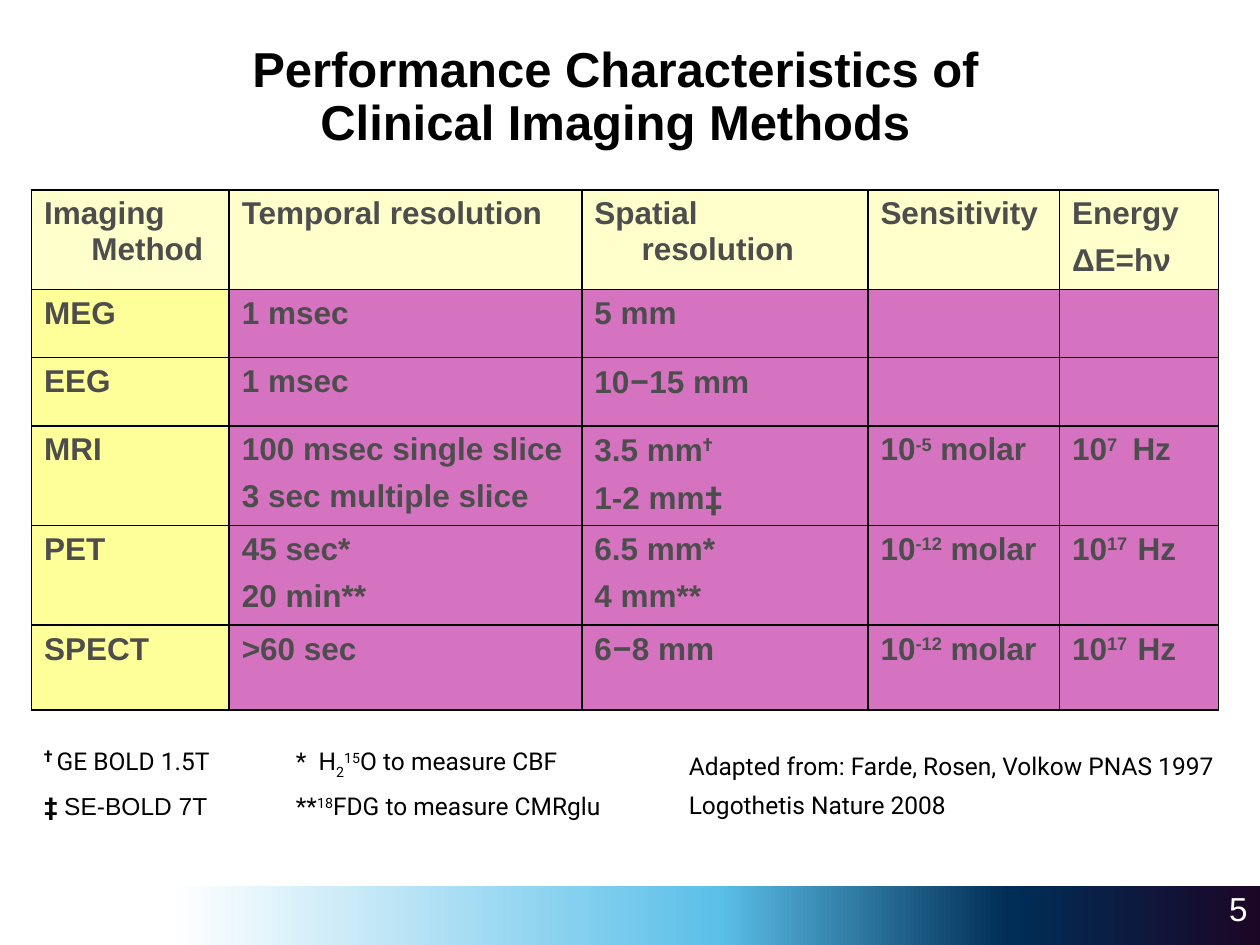
from lxml import etree
from pptx import Presentation
from pptx.dml import color
from pptx.enum import shapes, text
from pptx.oxml import ns
from pptx.util import Pt

COLORS = {
    "ink": "000000", "cell_text": "4D4D4D", "white": "FFFFFF",
    "header": "FFFFCC", "method": "FFFF99", "value": "D673C1",
}
BAND_STOPS = [(0, "FFFFFF"), (50, "5CC0E9"), (77, "002D56"), (100, "1C0626")]
COLUMNS = [113, 201.5, 163.5, 109.5, 91]
ROWS = [55, 39, 39, 56.5, 55, 48.5]

# A span is plain text, or a tuple of text and style overrides.
SUP = {"base": 30}
SUB = {"base": -25}
ROBOTO = {"font": "Roboto"}


def power(exponent, unit):
    return [["10", (exponent, SUP), unit]]


# Each cell is a list of paragraphs, each paragraph a list of spans.
TABLE = [
    [[["Imaging Method"]], [["Temporal resolution"]], [["Spatial resolution"]],
     [["Sensitivity"]], [["Energy"], ["ΔE=hν"]]],
    [[["MEG"]], [["1 msec"]], [["5 mm"]], [[]], [[]]],
    [[["EEG"]], [["1 msec"]], [["10", ("–", ROBOTO), "15 mm"]], [[]], [[]]],
    [[["MRI"]], [["100 msec single slice"], ["3 sec multiple slice"]],
     [["3.5 mm", ("†", ROBOTO | SUP)], ["1-2 mm", ("‡", ROBOTO)]],
     power("-5", " molar"), power("7   ", "Hz")],
    [[["PET"]], [["45 sec*"], ["20 min**"]], [["6.5 mm*"], ["4 mm**"]],
     power("-12", " molar"), power("17  ", "Hz")],
    [[["SPECT"]], [[">60 sec"]], [["6", ("–", ROBOTO), "8 mm"]],
     power("-12", " molar"), power("17  ", "Hz")],
]
FOOTNOTES = [
    [("† ", {"size": 16, "bold": True} | SUP), "GE BOLD 1.5T \t*  H",
     ("2", SUB), ("15", SUP), "O to measure CBF"],
    [("‡ ", {"bold": True}), ("SE-BOLD 7T ", {"font": "Arial"}), "\t**",
     ("18", SUP), "FDG to measure CMRglu"],
]
SOURCES = [["Adapted from: Farde, Rosen, Volkow PNAS 1997"],
           ["Logothetis Nature 2008"]]


def rgb(name):
    return color.RGBColor.from_string(COLORS[name])


def add_element(parent, tag, **attributes):
    return etree.SubElement(parent, ns.qn(tag), attributes)


def set_font(font, style):
    font.name = style["font"]
    font.size = Pt(style["size"])
    font.bold = style.get("bold", False)
    font.color.rgb = rgb(style["color"])


def add_spans(para, spans, style):
    for item in spans:
        words, changes = (item, {}) if isinstance(item, str) else item
        span = para.add_run()
        span.text = words
        merged = style | changes
        set_font(span.font, merged)
        if "base" in merged:
            span._r.get_or_add_rPr().set("baseline", str(merged["base"] * 1000))


def add_paragraphs(frame, paragraphs, style, gap=0):
    for index, spans in enumerate(paragraphs):
        para = frame.add_paragraph() if index else frame.paragraphs[0]
        if index:
            para.space_before = Pt(gap)
        add_spans(para, spans, style)


def add_text_box(page, box, paragraphs, style, gap=0, wrap=True):
    frame = page.shapes.add_textbox(*map(Pt, box)).text_frame
    frame.word_wrap = wrap
    add_paragraphs(frame, paragraphs, style, gap)
    return frame


def add_footer_band(page, box):
    """Draw the gradient band and the page number at its right end."""
    left, top, width, height = box
    band = page.shapes.add_shape(shapes.MSO_SHAPE.RECTANGLE, *map(Pt, box))
    band.shadow.inherit = False
    band.line.fill.background()
    band.fill.gradient()
    band.fill.gradient_angle = 0
    stops = band._element.spPr.find(".//" + ns.qn("a:gsLst"))
    for stop in list(stops):
        stops.remove(stop)
    for position, value in BAND_STOPS:
        stop = add_element(stops, "a:gs", pos=str(position * 1000))
        add_element(stop, "a:srgbClr", val=value)

    style = {"font": "Arial", "size": 19, "color": "white"}
    number_box = (left + width - 150, top - 2, 150, 36)
    number = add_text_box(page, number_box, [["5"]], style)
    number.paragraphs[0].alignment = text.PP_ALIGN.RIGHT


def place_title(page, box):
    title = page.shapes.title
    title.left, title.top, title.width, title.height = map(Pt, box)
    frame = title.text_frame
    frame.vertical_anchor = text.MSO_ANCHOR.BOTTOM
    para = frame.paragraphs[0]
    para.alignment = text.PP_ALIGN.CENTER
    para.line_spacing = 0.9
    style = {"font": "Arial", "size": 28, "bold": True, "color": "ink"}
    add_spans(para, ["Performance Characteristics of "], style)
    para.add_line_break()
    add_spans(para, ["Clinical Imaging Methods "], style)


def add_cell_borders(cell):
    properties = cell._tc.get_or_add_tcPr()
    for side in ("a:lnL", "a:lnR", "a:lnT", "a:lnB"):
        line = add_element(properties, side, w=str(Pt(1)))
        fill = add_element(line, "a:solidFill")
        add_element(fill, "a:srgbClr", val=COLORS["ink"])


def add_methods_table(page, left, top):
    table = page.shapes.add_table(
        len(ROWS), len(COLUMNS), Pt(left), Pt(top),
        Pt(sum(COLUMNS)), Pt(sum(ROWS))).table
    table.horz_banding = False
    for column, width in zip(table.columns, COLUMNS):
        column.width = Pt(width)
    for row, height in zip(table.rows, ROWS):
        row.height = Pt(height)

    style = {"font": "Arial", "size": 18, "bold": True, "color": "cell_text"}
    for row_index, row in enumerate(TABLE):
        for column_index, paragraphs in enumerate(row):
            cell = table.cell(row_index, column_index)
            add_cell_borders(cell)
            cell.fill.solid()
            kind = ("header" if row_index == 0
                    else "method" if column_index == 0 else "value")
            cell.fill.fore_color.rgb = rgb(kind)
            add_paragraphs(cell.text_frame, paragraphs, style, gap=6.5)
            for para in cell.text_frame.paragraphs:
                properties = para._p.get_or_add_pPr()
                properties.set("marL", str(Pt(27)))
                properties.set("indent", str(Pt(-27)))
                set_font(para.font, style)


def add_notes_row(page, box):
    """Place the symbol key at the left and the sources at the right."""
    left, top, width, height = box
    style = {"font": "Roboto", "size": 14, "color": "ink"}
    key = add_text_box(page, (left, top, 368, height), FOOTNOTES, style, gap=6.5)
    for para in key.paragraphs:
        tabs = add_element(para._p.get_or_add_pPr(), "a:tabLst")
        add_element(tabs, "a:tab", pos=str(Pt(144)), algn="l")
    source_box = (left + width - 322.5, top + 4.5, 322.5, 48)
    add_text_box(page, source_box, SOURCES, style, gap=5.6, wrap=False)


def main():
    deck = Presentation()
    deck.slide_width, deck.slide_height = Pt(720), Pt(540)
    page = deck.slides.add_slide(deck.slide_layouts[5])
    add_footer_band(page, (98, 506, 622, 34))
    place_title(page, (25, 0, 661, 90))
    add_methods_table(page, 18, 108.5)
    add_notes_row(page, (18, 421, 691, 72))
    deck.save("out.pptx")


if __name__ == "__main__":
    main()
